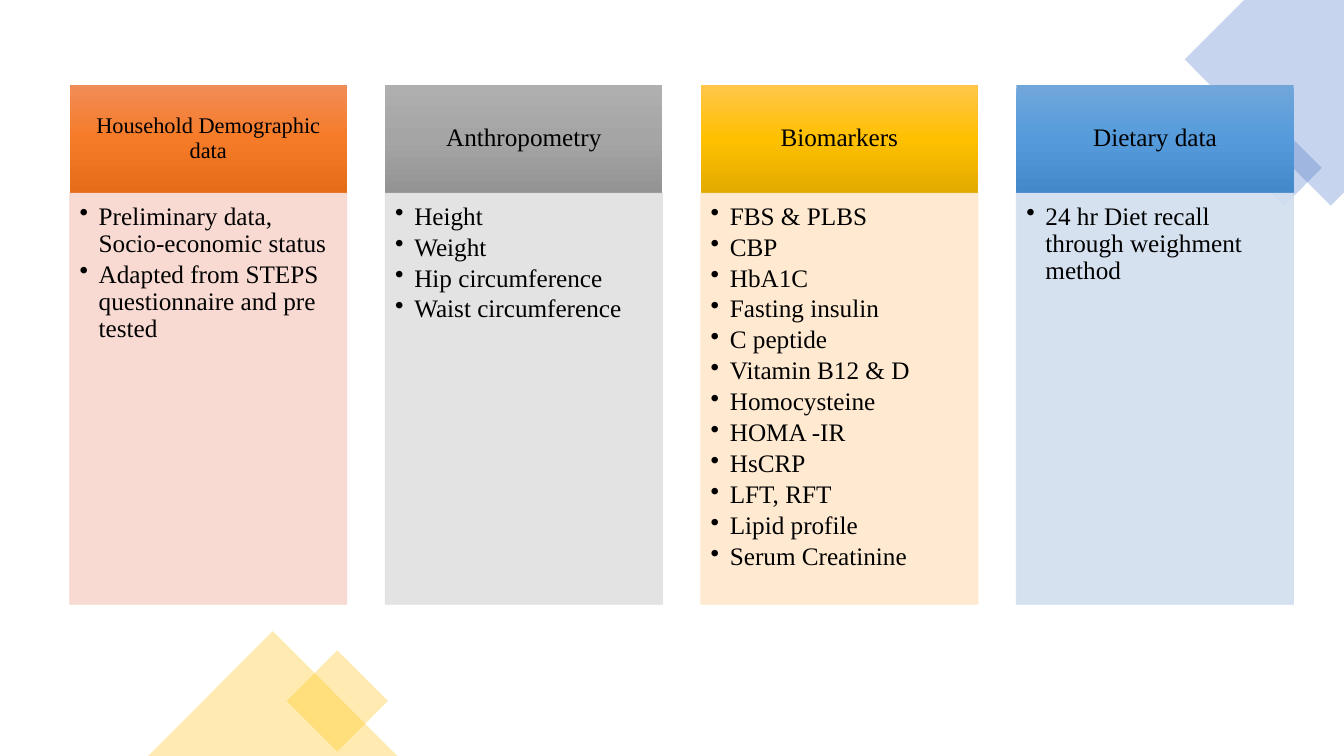
from copy import deepcopy
from dataclasses import dataclass

from pptx import Presentation, util as u
from pptx.dml.color import RGBColor
from pptx.enum import shapes as sh, text as tx
from pptx.oxml.ns import qn
from pptx.oxml.xmlchemy import OxmlElement

WIDE, HIGH = u.Inches(13.33), u.Inches(7.5)


@dataclass(frozen=True)
class Theme:
    font: str = "Times New Roman"
    ink: str = "000000"
    blue: str = "4472C4"
    gold: str = "FFC000"
    size: int = 18
    small: int = 16
    faint: int = 30
    dense: int = 90


@dataclass(frozen=True)
class Box:
    """Left, top, width and height in hundredths of the slide."""
    left: float
    top: float
    wide: float
    high: float


@dataclass(frozen=True)
class Panel:
    head: str
    items: tuple[str, ...]
    grad: tuple[str, str, str]
    tint: str
    size: int


@dataclass(frozen=True)
class Decor:
    kind: sh.MSO_SHAPE
    box: Box
    color: str
    turn: int


THEME = Theme()
LEFT, STEP, WIDTH = 5.18, 23.48, 20.63
HEAD_TOP, HEAD_HIGH = 11.2, 14.3
BODY_TOP, BODY_HIGH = 25.55, 54.4

PANELS = (
    Panel("Household Demographic data",
          ("Preliminary data, Socio-economic status",
           "Adapted from STEPS questionnaire and pre tested"),
          ("F18C57", "F67B28", "E56C19"), "F8D7CE", THEME.small),
    Panel("Anthropometry",
          ("Height", "Weight", "Hip circumference", "Waist circumference"),
          ("AFAFAF", "A5A5A5", "939393"), "E1E1E1", THEME.size),
    Panel("Biomarkers",
          ("FBS & PLBS", "CBP", "HbA1C", "Fasting insulin", "C peptide",
           "Vitamin B12 & D", "Homocysteine", "HOMA -IR", "HsCRP",
           "LFT, RFT", "Lipid profile", "Serum Creatinine"),
          ("FFC64B", "FFC000", "E3AB00"), "FFE8CC", THEME.size),
    Panel("Dietary data",
          ("24 hr Diet recall through weighment method",),
          ("71A6DB", "559BDB", "448ACA"), "D2DEEF", THEME.size),
)

DECOR = (
    Decor(sh.MSO_SHAPE.RECTANGLE, Box(93.55, 18.67, 3.98, 7.07), THEME.blue, 315),
    Decor(sh.MSO_SHAPE.RECTANGLE, Box(22.43, 88, 5.33, 9.47), THEME.gold, 45),
    Decor(sh.MSO_SHAPE.ISOSCELES_TRIANGLE, Box(11.03, 83.47, 18.53, 16.53),
          THEME.gold, 0),
)
CORNER = ((100, 0), (92.57, 0), (88.15, 7.87), (99.02, 27.2), (100, 25.47))


def across(share: float) -> int:
    return round(WIDE * share / 100)


def down(share: float) -> int:
    return round(HIGH * share / 100)


def paint(fill, color: str, alpha: int) -> None:
    """Fill with a solid colour of the given opacity in percent."""
    fill.solid()
    fill.fore_color.rgb = RGBColor.from_string(color)
    node = OxmlElement("a:alpha")
    node.set("val", str(alpha * 1000))
    fill._xPr.find(qn("a:solidFill"))[0].append(node)


def blend(fill, colors: tuple[str, ...]) -> None:
    """Fill with a top-down gradient of three evenly spaced colours."""
    fill.gradient()
    fill.gradient_angle = 270
    stops = fill._xPr.find(qn("a:gradFill")).find(qn("a:gsLst"))
    stops.insert(1, deepcopy(stops[0]))
    for i, (stop, color) in enumerate(zip(fill.gradient_stops, colors)):
        stop.position = i / 2
        stop.color.rgb = RGBColor.from_string(color)


def add(slide, kind: sh.MSO_SHAPE, box: Box):
    """Add a preset shape without shadow or outline."""
    shape = slide.shapes.add_shape(kind, across(box.left), down(box.top),
                                   across(box.wide), down(box.high))
    shape.shadow.inherit = False
    shape.line.fill.background()
    return shape


def inset(frame, left: float, top: float, right: float, base: float) -> None:
    """Set the margins in points."""
    frame.word_wrap = True
    frame.margin_left, frame.margin_top = u.Pt(left), u.Pt(top)
    frame.margin_right, frame.margin_bottom = u.Pt(right), u.Pt(base)


def style(para, size: int, align: tx.PP_ALIGN) -> None:
    para.alignment = align
    para.line_spacing = 0.9
    para.font.name = THEME.font
    para.font.size = u.Pt(size)
    para.font.color.rgb = RGBColor.from_string(THEME.ink)


def bullet(para) -> None:
    para.level = 1
    para.space_after = u.Pt(0.15 * THEME.size)
    props = para._p.get_or_add_pPr()
    hang = u.Inches(0.19)
    props.set("marL", str(hang))
    props.set("indent", str(-hang))
    mark = OxmlElement("a:buChar")
    mark.set("char", "•")
    props.append(mark)


def draw_head(slide, panel: Panel, left: float) -> None:
    shape = add(slide, sh.MSO_SHAPE.RECTANGLE,
                Box(left, HEAD_TOP, WIDTH, HEAD_HIGH))
    blend(shape.fill, panel.grad)
    frame = shape.text_frame
    side, edge = 0.56 * panel.size, 0.32 * panel.size
    inset(frame, side, edge, side, edge)
    frame.vertical_anchor = tx.MSO_ANCHOR.MIDDLE
    frame.text = panel.head
    style(frame.paragraphs[0], panel.size, tx.PP_ALIGN.CENTER)


def draw_body(slide, panel: Panel, left: float) -> None:
    shape = add(slide, sh.MSO_SHAPE.RECTANGLE,
                Box(left, BODY_TOP, WIDTH, BODY_HIGH))
    paint(shape.fill, panel.tint, THEME.dense)
    paint(shape.line.fill, panel.tint, THEME.dense)
    shape.line.width = u.Pt(0.5)
    frame = shape.text_frame
    inset(frame, 7.2, 7.2, 10, 11.5)
    frame.vertical_anchor = tx.MSO_ANCHOR.TOP
    frame.text = "\n".join(panel.items)
    for para in frame.paragraphs:
        bullet(para)
        style(para, THEME.size, tx.PP_ALIGN.LEFT)


def draw_decor(slide) -> None:
    first, *rest = [(across(x), down(y)) for x, y in CORNER]
    path = slide.shapes.build_freeform(*first)
    path.add_line_segments(rest)
    shape = path.convert_to_shape()
    shape.shadow.inherit = False
    shape.line.fill.background()
    paint(shape.fill, THEME.blue, THEME.faint)
    for item in DECOR:
        shape = add(slide, item.kind, item.box)
        shape.rotation = item.turn
        paint(shape.fill, item.color, THEME.faint)


def main() -> None:
    deck = Presentation()
    deck.slide_width, deck.slide_height = WIDE, HIGH
    slide = deck.slides.add_slide(deck.slide_layouts[6])
    draw_decor(slide)
    for i, panel in enumerate(PANELS):
        left = LEFT + i * STEP
        draw_head(slide, panel, left)
        draw_body(slide, panel, left)
    deck.save("out.pptx")


if __name__ == "__main__":
    main()
